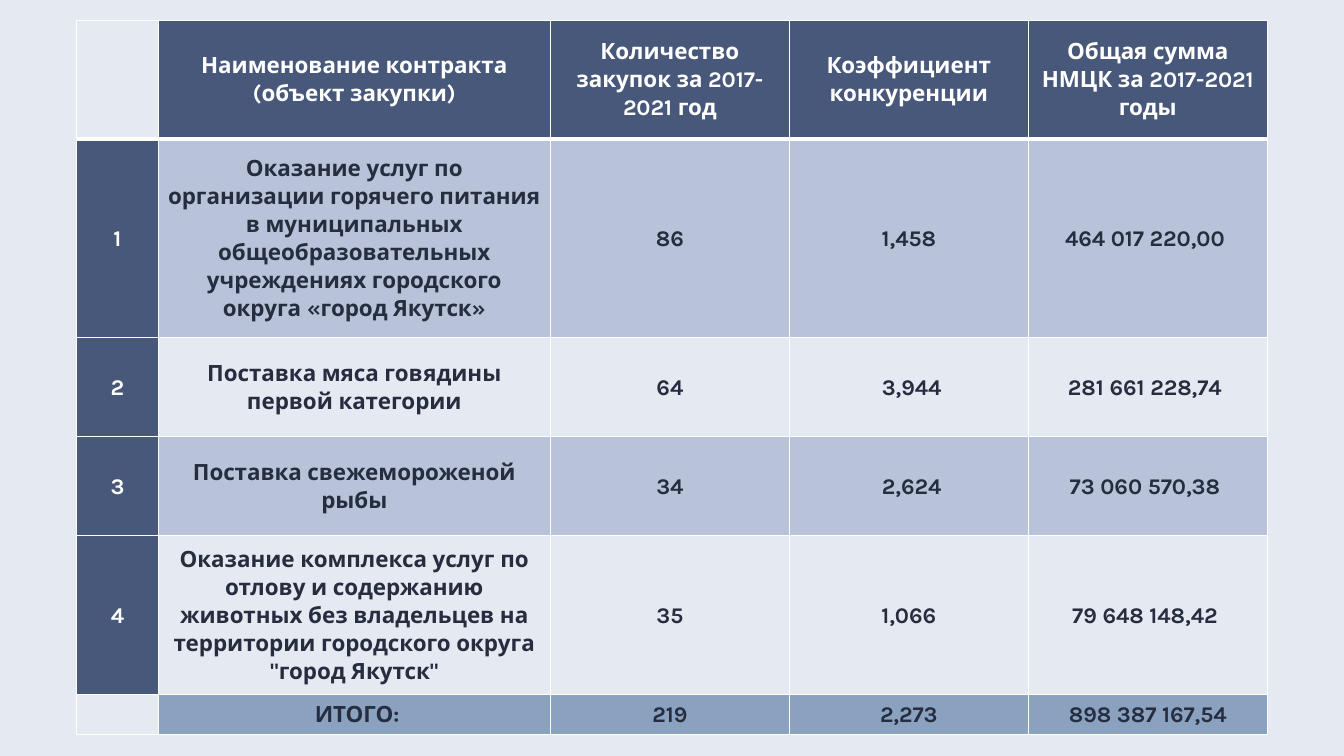
from dataclasses import dataclass

from lxml import etree
from pptx import Presentation
from pptx.dml.color import RGBColor
from pptx.enum.text import MSO_ANCHOR, PP_ALIGN
from pptx.oxml.ns import qn
from pptx.util import Inches, Pt

CENTER = PP_ALIGN.CENTER
MIDDLE = MSO_ANCHOR.MIDDLE

WHITE = RGBColor(0xFF, 0xFF, 0xFF)
PALE = RGBColor(0xE5, 0xE9, 0xF2)
LIGHT = RGBColor(0xB8, 0xC3, 0xD9)
STEEL = RGBColor(0x8A, 0xA1, 0xC0)
NAVY = RGBColor(0x48, 0x58, 0x7A)
INK = RGBColor(0x25, 0x2D, 0x3F)

FONT = "Karla"
WIDTHS = [0.81, 3.89, 2.37, 2.37, 2.37]
THIN, THICK = 1, 3


@dataclass
class Row:
    height: float
    fill: RGBColor
    texts: list[str]


ROWS = [
    Row(1.18, NAVY, ["", "Наименование контракта\n(объект закупки)",
                     "Количество закупок за 2017-2021 год",
                     "Коэффициент конкуренции",
                     "Общая сумма НМЦК за 2017-2021 годы"]),
    Row(1.97, LIGHT, ["1", "Оказание услуг по организации горячего питания "
                      "в муниципальных общеобразовательных учреждениях "
                      "городского округа «город Якутск»",
                      "86", "1,458", "464 017 220,00 "]),
    Row(0.98, PALE, ["2", "Поставка мяса говядины первой категории",
                     "64", " 3,944", "281 661 228,74 "]),
    Row(0.98, LIGHT, ["3", "Поставка свежемороженой рыбы",
                      "34", " 2,624", "73 060 570,38 "]),
    Row(1.58, PALE, ["4", "Оказание комплекса услуг по отлову и содержанию "
                     "животных без владельцев на территории городского "
                     "округа \"город Якутск\"",
                     "35", "1,066", "79 648 148,42 "]),
    Row(0.4, STEEL, ["", " ИТОГО:", "219", "2,273", "898 387 167,54"]),
]


def add_borders(cell, top: float, bottom: float) -> None:
    props = cell._tc.get_or_add_tcPr()
    sides = {"a:lnL": THIN, "a:lnR": THIN, "a:lnT": top, "a:lnB": bottom}
    for tag, width in sides.items():
        line = etree.SubElement(props, qn(tag), w=str(Pt(width)))
        fill = etree.SubElement(line, qn("a:solidFill"))
        etree.SubElement(fill, qn("a:srgbClr"), val=str(WHITE))


def write(cell, text: str, *, color: RGBColor, size: float = 16,
          bold: bool = True, spacing: float = 1.07) -> None:
    cell.vertical_anchor = MIDDLE
    cell.margin_left = cell.margin_right = Inches(0.07)
    cell.margin_top = cell.margin_bottom = 0
    cell.text_frame.text = text
    for par in cell.text_frame.paragraphs:
        par.alignment = CENTER
        par.line_spacing = spacing
        for run in par.runs:
            font = run.font
            font.name, font.size, font.bold = FONT, Pt(size), bold
            font.color.rgb = color


def add_grid(slide) -> None:
    frame = slide.shapes.add_table(
        len(ROWS), len(WIDTHS), Inches(0.76), Inches(0.2),
        Inches(sum(WIDTHS)), Inches(sum(row.height for row in ROWS)))
    table = frame.table
    table.first_row = table.horz_banding = False
    for col, width in zip(table.columns, WIDTHS):
        col.width = Inches(width)
    for r, row in enumerate(ROWS):
        table.rows[r].height = Inches(row.height)
        for c, text in enumerate(row.texts):
            cell = table.cell(r, c)
            head = r == 0 or c == 0
            add_borders(cell, THICK if r == 1 else THIN,
                        THICK if r == 0 else THIN)
            if text:
                cell.fill.solid()
                cell.fill.fore_color.rgb = NAVY if head else row.fill
            else:
                cell.fill.background()
            write(cell, text, color=WHITE if head else INK)


def main() -> None:
    deck = Presentation()
    deck.slide_width, deck.slide_height = Inches(13.33), Inches(7.5)
    slide = deck.slides.add_slide(deck.slide_layouts[6])
    slide.background.fill.solid()
    slide.background.fill.fore_color.rgb = PALE
    add_grid(slide)
    deck.save("out.pptx")


if __name__ == "__main__":
    main()
